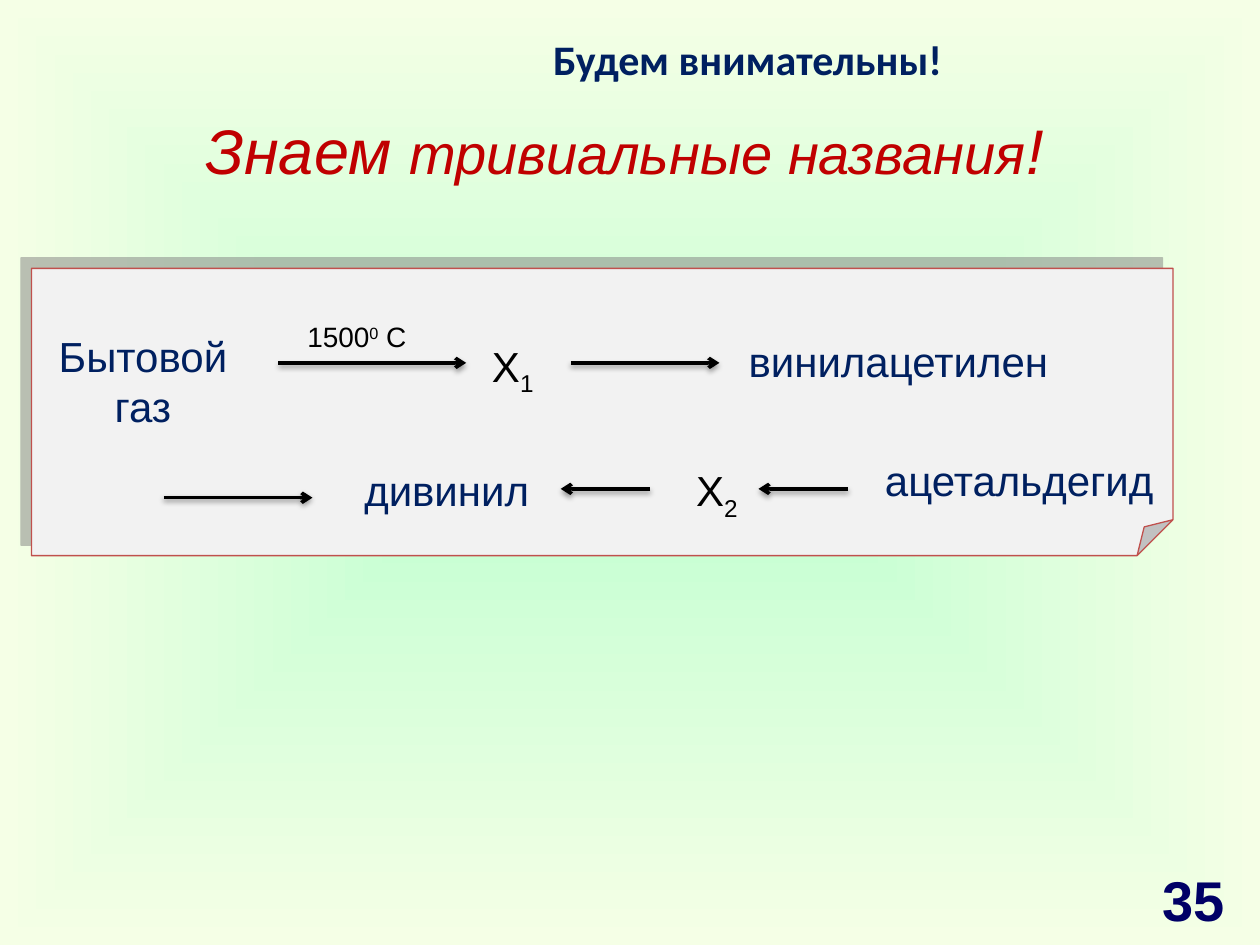
from lxml import etree
from pptx import Presentation
from pptx.dml.color import RGBColor
from pptx.enum.shapes import MSO_CONNECTOR, MSO_SHAPE
from pptx.enum.text import MSO_ANCHOR, MSO_AUTO_SIZE, PP_ALIGN
from pptx.oxml import parse_xml
from pptx.oxml.ns import nsdecls, qn
from pptx.util import Inches, Pt

STRAIGHT = MSO_CONNECTOR.STRAIGHT
FOLDED_CORNER = MSO_SHAPE.FOLDED_CORNER
TOP, MIDDLE = MSO_ANCHOR.TOP, MSO_ANCHOR.MIDDLE
GROW, FIXED = MSO_AUTO_SIZE.SHAPE_TO_FIT_TEXT, MSO_AUTO_SIZE.NONE
LEFT, CENTER = PP_ALIGN.LEFT, PP_ALIGN.CENTER

COLUMNS, ROWS = 10, 7.5
COLORS = {
    "center": "C1FFD1", "edge": "F5FFE6", "card": "F2F2F2", "card_line": "C0504D",
    "card_shadow": "808080", "ink": "000000", "title": "C00000",
    "substance": "002060", "number": "000066",
}


class SlideBuilder:
    """Draws on a grid of COLUMNS by ROWS that covers the slide."""

    font = "Arial"

    def __init__(self, deck):
        self.column = deck.slide_width / COLUMNS
        self.row = deck.slide_height / ROWS
        self.slide = deck.slides.add_slide(deck.slide_layouts[6])

    def cells(self, *lengths):
        """Turn alternating column and row counts into EMU."""
        units = (self.column, self.row) * 2
        return [round(length * unit) for length, unit in zip(lengths, units)]

    def background(self, center, edge):
        stops = "".join(
            f'<a:gs pos="{pos}"><a:srgbClr val="{COLORS[name]}"/></a:gs>'
            for pos, name in ((0, center), (100000, edge)))
        bg = parse_xml(
            f'<p:bg {nsdecls("p", "a")}><p:bgPr><a:gradFill rotWithShape="1">'
            f'<a:gsLst>{stops}</a:gsLst><a:path path="shape">'
            '<a:fillToRect l="50000" t="50000" r="50000" b="50000"/></a:path>'
            '</a:gradFill><a:effectLst/></p:bgPr></p:bg>')
        self.slide.element.cSld.insert(0, bg)

    def shadow(self, shape, color, opacity, blur, distance, angle):
        effects = etree.SubElement(shape.element.spPr, qn("a:effectLst"))
        outer = etree.SubElement(
            effects, qn("a:outerShdw"), blurRad=str(Pt(blur)), dist=str(Pt(distance)),
            dir=str(angle * 60000), algn="ctr", rotWithShape="0")
        tint = etree.SubElement(outer, qn("a:srgbClr"), val=COLORS[color])
        etree.SubElement(tint, qn("a:alpha"), val=str(opacity * 1000))

    def outline(self, shape, color, width):
        shape.line.color.rgb = RGBColor.from_string(COLORS[color])
        shape.line.width = Pt(width)

    def card(self, *place):
        card = self.slide.shapes.add_shape(FOLDED_CORNER, *self.cells(*place))
        # python-pptx lists no adjustment for this preset
        guides = card.element.spPr.find(f'{qn("a:prstGeom")}/{qn("a:avLst")}')
        etree.SubElement(guides, qn("a:gd"), name="adj", fmla="val 12500")
        card.fill.solid()
        card.fill.fore_color.rgb = RGBColor.from_string(COLORS["card"])
        self.outline(card, "card_line", 0.75)
        self.shadow(card, "card_shadow", 50, 0, 8.5, 225)

    def arrow(self, start, end, row):
        arrow = self.slide.shapes.add_connector(
            STRAIGHT, *self.cells(start, row, end, row))
        self.outline(arrow, "ink", 2)
        line = arrow.element.spPr.find(qn("a:ln"))
        etree.SubElement(line, qn("a:tailEnd"), type="arrow")
        self.shadow(arrow, "ink", 38, 3.1, 1.6, 90)

    def text(self, place, runs, color, align=CENTER, frame_format=None,
             paragraph_format=None, **font_format):
        """Each run is (words, size in points, baseline shift in percent)."""
        frame = self.slide.shapes.add_textbox(*self.cells(*place)).text_frame
        frame_values = {"word_wrap": True, "auto_size": GROW, "vertical_anchor": TOP}
        for name, value in (frame_values | (frame_format or {})).items():
            setattr(frame, name, value)
        paragraph = frame.paragraphs[0]
        for name, value in ({"alignment": align} | (paragraph_format or {})).items():
            setattr(paragraph, name, value)
        for words, size, shift in runs:
            run = paragraph.add_run()
            run.text = words
            for name, value in ({"name": self.font, "size": Pt(size)} | font_format).items():
                setattr(run.font, name, value)
            run.font.color.rgb = RGBColor.from_string(COLORS[color])
            if shift:
                run._r.get_or_add_rPr().set("baseline", str(shift * 1000))

    def substance(self, words, *place):
        self.text(place, [(words, 24, 0)], "substance")

    def unknown(self, index, *place):
        self.text(place, [("X", 24, 0), (index, 24, -25)], "ink")


def main():
    deck = Presentation()
    deck.slide_width, deck.slide_height = Inches(10), Inches(7.5)
    page = SlideBuilder(deck)

    page.background("center", "edge")
    page.card(0.25, 2.13, 9.06, 2.28)
    page.text((0.51, 0.71, 8.9, 0.95),
              [("Знаем ", 36, 0), ("тривиальные названия", 32, 0), ("!", 36, 0)],
              "title", frame_format={"auto_size": FIXED, "vertical_anchor": MIDDLE},
              italic=True)

    upper, lower = 2.88, 3.88
    for start, end, row in ((2.21, 3.7, upper), (4.53, 5.71, upper),
                            (1.3, 2.48, 3.95), (5.16, 4.45, lower),
                            (6.73, 6.02, lower)):
        page.arrow(start, end, row)

    page.substance("Бытовой газ", 0.27, 2.57, 1.73, 0.91)
    page.text((2.34, 2.49, 1.01, 0.37),
              [("1500", 16, 0), ("0", 16, 30), (" С", 16, 0)], "ink", LEFT,
              {"word_wrap": False})
    page.unknown("1", 3.62, 2.65, 0.9, 0.51)
    page.substance("винилацетилен", 5.79, 2.61, 2.68, 0.51)
    page.substance("дивинил", 2.64, 3.64, 1.81, 0.51)
    page.unknown("2", 5.24, 3.64, 0.9, 0.51)
    page.substance("ацетальдегид", 6.81, 3.56, 2.56, 0.5)

    page.text((9.02, 6.82, 0.9, 0.52), [("35", 32, 0)], "number",
              frame_format={"auto_size": FIXED}, bold=True)
    page.text((4.06, 0.19, 4.41, 0.5), [("Будем внимательны!", 24, 0)], "substance",
              LEFT, {"margin_left": Inches(0.33)},
              {"line_spacing": 1.07, "space_after": Pt(8)}, name="Calibri", bold=True)

    deck.save("out.pptx")


if __name__ == "__main__":
    main()
